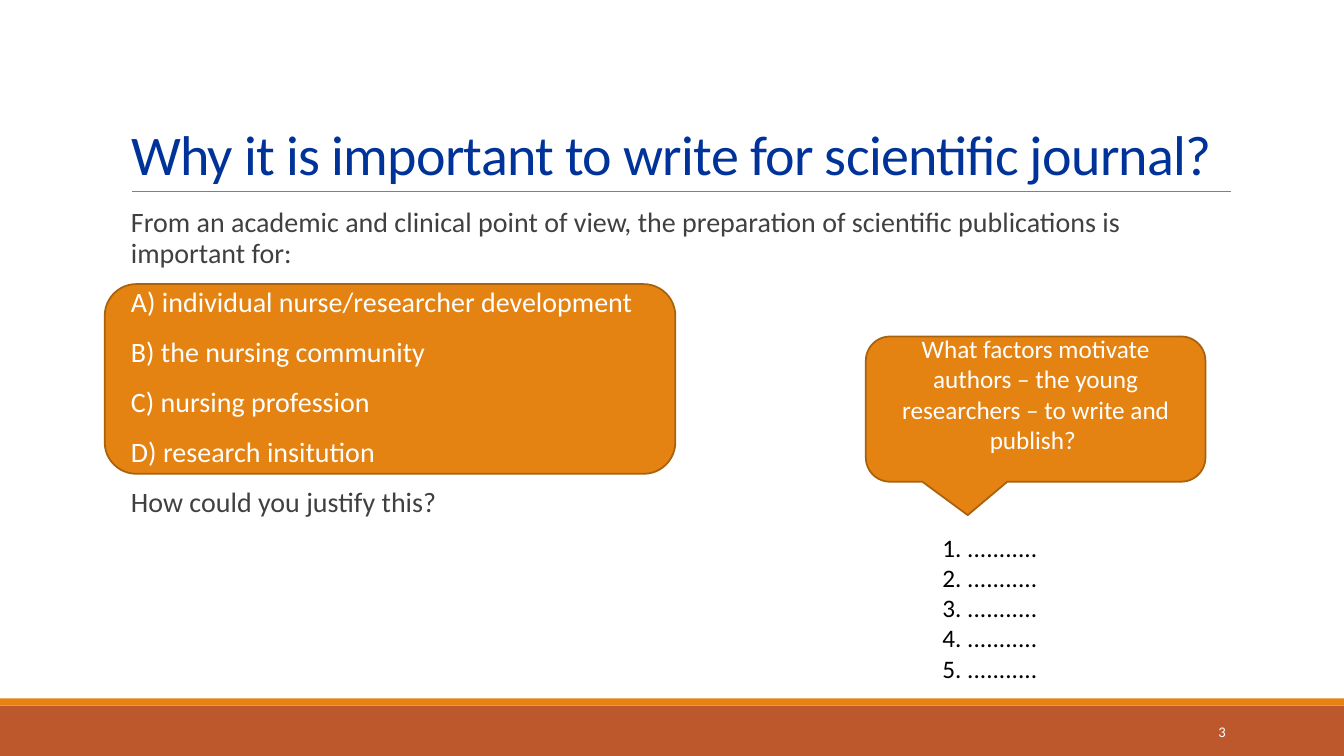
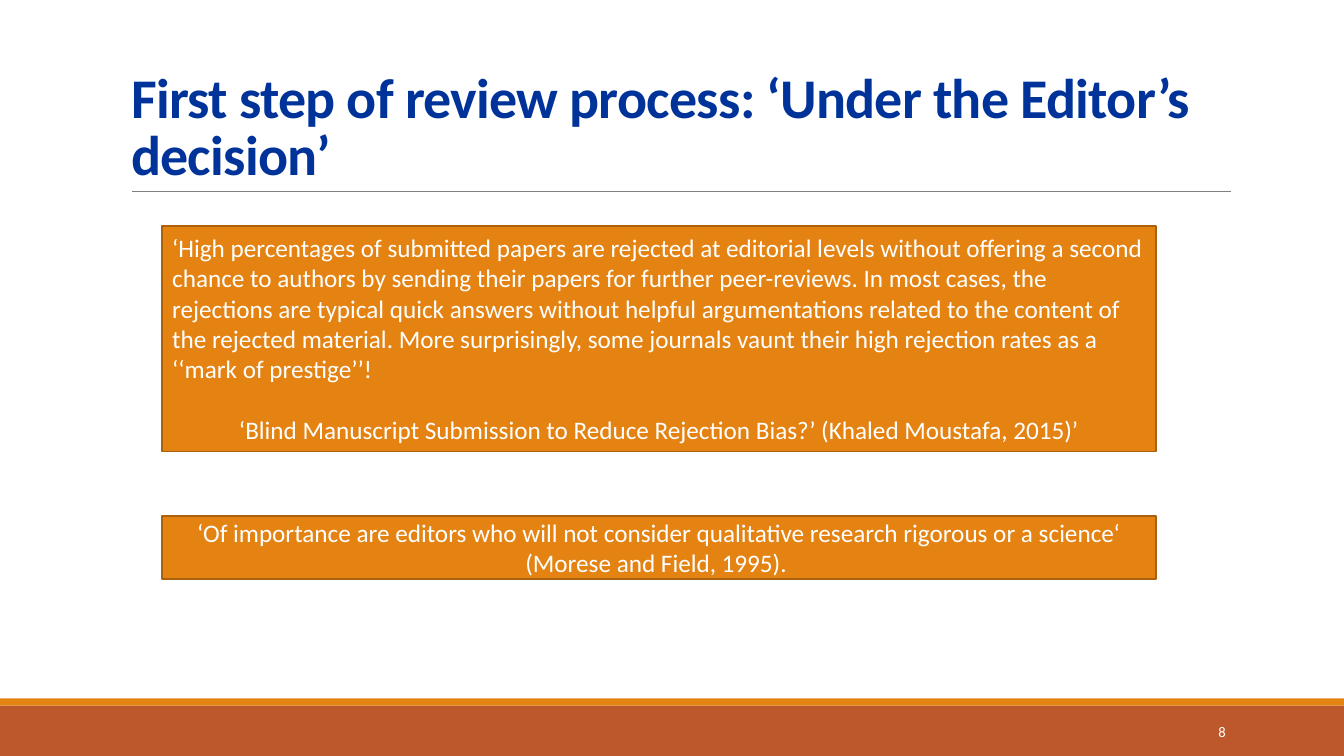
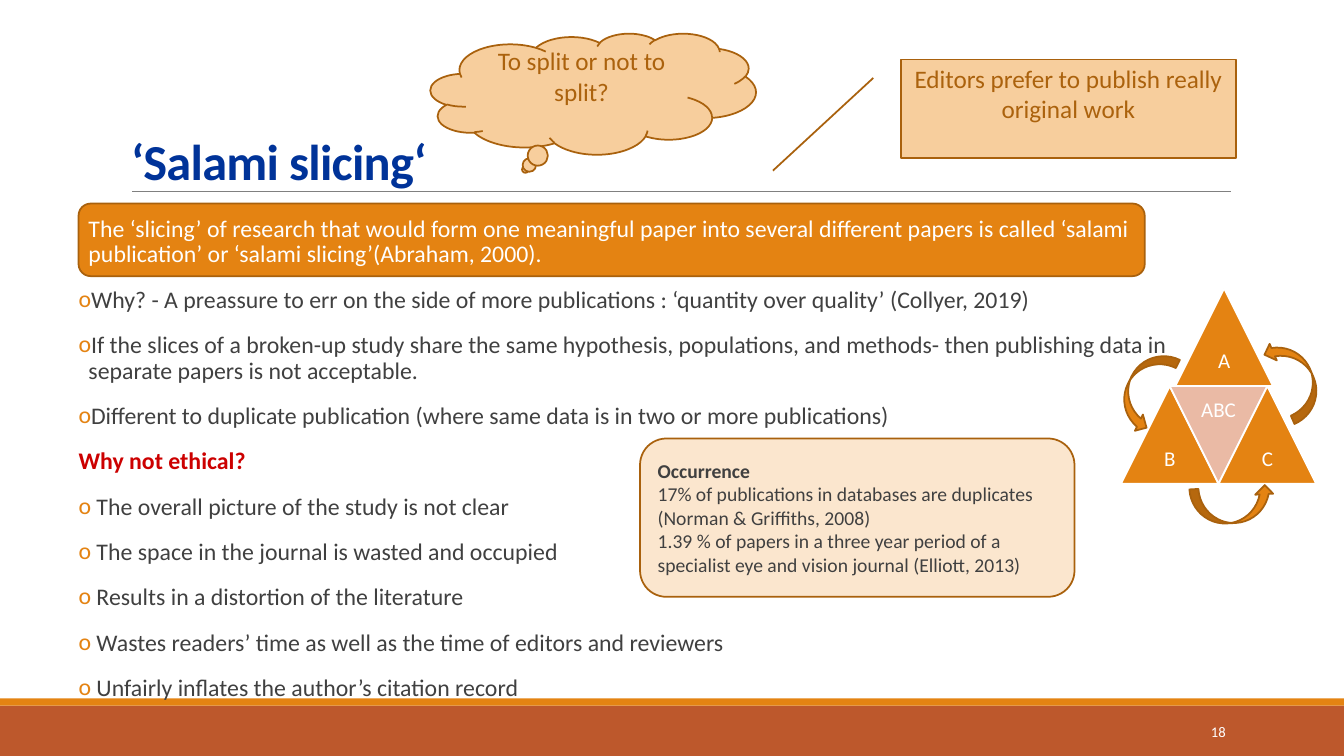
from dataclasses import dataclass
from typing import Optional, Sequence

from lxml.etree import SubElement
from pptx import Presentation
from pptx.dml.color import RGBColor
from pptx.enum.shapes import MSO_CONNECTOR, MSO_SHAPE
from pptx.enum.text import MSO_ANCHOR, MSO_AUTO_SIZE, PP_ALIGN
from pptx.oxml.ns import qn
from pptx.presentation import Presentation as Deck
from pptx.shapes.autoshape import Shape
from pptx.slide import Slide
from pptx.text.text import TextFrame, _Paragraph
from pptx.util import Cm, Pt

FONT = "Calibri"
ORANGE = RGBColor(0xE4, 0x83, 0x12)
RUST = RGBColor(0xBD, 0x58, 0x2C)
BROWN = RGBColor(0xA9, 0x61, 0x0D)
CALLOUT_TEXT = RGBColor(0xAB, 0x62, 0x0D)
PEACH = RGBColor(0xF7, 0xCE, 0x9D)
CREAM = RGBColor(0xFB, 0xE6, 0xCE)
PINK = RGBColor(0xEA, 0xBA, 0xA5)
NAVY = RGBColor(0x00, 0x33, 0x99)
RED = RGBColor(0xCC, 0x00, 0x00)
CHARCOAL = RGBColor(0x40, 0x40, 0x40)
GRAY = RGBColor(0x80, 0x80, 0x80)
WHITE = RGBColor(0xFF, 0xFF, 0xFF)
BLACK = RGBColor(0x00, 0x00, 0x00)

TITLE_AND_CONTENT, TITLE_ONLY = 1, 5
LOW_INSET = 0.89  # lifts centred text by half a line


@dataclass(frozen=True)
class Box:
    """A frame in centimetres."""
    left: float
    top: float
    width: float
    height: float

    def place(self, shape: Shape) -> None:
        shape.left, shape.top = Cm(self.left), Cm(self.top)
        shape.width, shape.height = Cm(self.width), Cm(self.height)

    def lengths(self) -> tuple[Cm, Cm, Cm, Cm]:
        return Cm(self.left), Cm(self.top), Cm(self.width), Cm(self.height)


@dataclass(frozen=True)
class Line:
    """One paragraph; bullet None means neither bullet nor indent."""
    text: str
    color: RGBColor = WHITE
    bold: bool = False
    align: PP_ALIGN = PP_ALIGN.LEFT
    bullet: Optional[str] = " "
    space_before: float = 0


@dataclass(frozen=True)
class Triangle:
    label: str
    left: float
    top: float
    kind: MSO_SHAPE = MSO_SHAPE.ISOSCELES_TRIANGLE
    fill: RGBColor = ORANGE


@dataclass(frozen=True)
class CycleArrow:
    left: float
    top: float
    rotation: float


def write_lines(frame: TextFrame, lines: Sequence[Line], size: float) -> list[_Paragraph]:
    paragraphs = []
    for index, line in enumerate(lines):
        paragraph = frame.add_paragraph() if index else frame.paragraphs[0]
        paragraph.alignment = line.align
        paragraph.space_before = Pt(line.space_before)
        run = paragraph.add_run()
        run.text = line.text
        run.font.name, run.font.size = FONT, Pt(size)
        run.font.bold = line.bold
        run.font.color.rgb = line.color
        paragraphs.append(paragraph)
    return paragraphs


def add_bullet(paragraph: _Paragraph, bullet: Optional[str]) -> None:
    props = paragraph._p.get_or_add_pPr()
    indent = Cm(0.25) if bullet else 0
    props.set("marL", str(indent))
    props.set("indent", str(-indent))
    if bullet is None:
        SubElement(props, qn("a:buNone"))
        return
    SubElement(SubElement(props, qn("a:buClr")), qn("a:srgbClr"), val=str(ORANGE))
    SubElement(props, qn("a:buFont"), typeface=FONT)
    SubElement(props, qn("a:buChar"), char=bullet)


def add_panel(slide: Slide, kind: MSO_SHAPE, box: Box, fill: RGBColor = ORANGE,
              outline: Optional[RGBColor] = BROWN, lines: Sequence[Line] = (),
              size: float = 18, bottom_inset: float = 0.13) -> Shape:
    panel = slide.shapes.add_shape(kind, *box.lengths())
    panel.shadow.inherit = False
    panel.fill.solid()
    panel.fill.fore_color.rgb = fill
    if outline is None:
        panel.line.fill.background()
    else:
        panel.line.color.rgb = outline
        panel.line.width = Pt(1.25)
    panel.text_frame.vertical_anchor = MSO_ANCHOR.MIDDLE
    panel.text_frame.margin_bottom = Cm(bottom_inset)
    write_lines(panel.text_frame, lines, size)
    return panel


def add_text(slide: Slide, box: Box, lines: Sequence[Line], size: float,
             wrap: bool, anchor: MSO_ANCHOR) -> None:
    frame = slide.shapes.add_textbox(*box.lengths()).text_frame
    frame.word_wrap = wrap
    frame.vertical_anchor = anchor
    write_lines(frame, lines, size)


def add_titled_slide(deck: Deck, layout: int, number: str, title: str,
                     size: float = 40, bold: bool = True, top: float = 0.79) -> Slide:
    slide = deck.slides.add_slide(deck.slide_layouts[layout])
    heading = slide.shapes.title
    Box(3.05, top, 27.94, 4.04).place(heading)
    frame = heading.text_frame
    frame.auto_size = MSO_AUTO_SIZE.NONE
    frame.vertical_anchor = MSO_ANCHOR.BOTTOM
    for paragraph in write_lines(frame, [Line(title, NAVY, bold)], size):
        paragraph.line_spacing = 0.85
        for run in paragraph.runs:
            run._r.get_or_add_rPr().set("spc", "-50")
    add_text(slide, Box(27.51, 17.93, 3.63, 1.02),
             [Line(number, align=PP_ALIGN.RIGHT)], 10.5, True, MSO_ANCHOR.MIDDLE)
    return slide


def fill_body(slide: Slide, box: Box, lines: Sequence[Line], size: float) -> None:
    body = slide.placeholders[1]
    box.place(body)
    frame = body.text_frame
    frame.auto_size = MSO_AUTO_SIZE.NONE
    frame.margin_left = frame.margin_right = 0
    for paragraph, line in zip(write_lines(frame, lines, size), lines):
        paragraph.line_spacing = 0.9
        paragraph.space_before, paragraph.space_after = Pt(12), Pt(2)
        add_bullet(paragraph, line.bullet)


def send_behind_title(slide: Slide, panel: Shape) -> None:
    slide.shapes.title.element.addprevious(panel.element)


def decorate_master(deck: Deck, slide: Slide) -> None:
    """Draw the bands and title rule on a slide, then move them to the master."""
    footer = add_panel(slide, MSO_SHAPE.RECTANGLE, Box(0, 17.78, 33.87, 1.27), RUST, None)
    stripe = add_panel(slide, MSO_SHAPE.RECTANGLE, Box(0, 17.6, 33.87, 0.18), ORANGE, None)
    rule = slide.shapes.add_connector(
        MSO_CONNECTOR.STRAIGHT, Cm(3.33), Cm(4.83), Cm(31.01), Cm(4.83))
    rule.line.color.rgb = GRAY
    rule.line.width = Pt(0.5)
    SubElement(rule.element.spPr, qn("a:effectLst"))
    first_placeholder = deck.slide_master.placeholders[0].element
    for part in (footer, stripe, rule):
        first_placeholder.addprevious(part.element)


def build_importance(deck: Deck) -> None:
    slide = add_titled_slide(deck, TITLE_AND_CONTENT, "3",
                             "Why it is important to write for scientific journal?", bold=False)
    decorate_master(deck, slide)
    reasons = add_panel(slide, MSO_SHAPE.ROUNDED_RECTANGLE, Box(2.64, 7.16, 14.38, 4.78))
    send_behind_title(slide, reasons)
    fill_body(slide, Box(3.05, 5.13, 27.94, 11.18), [
        Line("From an academic and clinical point of view, the preparation of "
             "scientific publications is important for:", CHARCOAL),
        Line("A) individual nurse/researcher development"),
        Line("B) the nursing community"),
        Line("C) nursing profession"),
        Line("D) research insitution"),
        Line("How could you justify this?", CHARCOAL),
    ], 20)
    question = add_panel(
        slide, MSO_SHAPE.ROUNDED_RECTANGULAR_CALLOUT, Box(21.82, 8.48, 8.56, 3.66),
        lines=[Line("What factors motivate authors – the young researchers – "
                    "to write and publish? ", align=PP_ALIGN.CENTER)],
        bottom_inset=LOW_INSET)
    question.adjustments[0] = -0.2
    question.adjustments[1] = 0.73
    add_text(slide, Box(23.5, 13.28, 2.92, 4.11),
             [Line(f"{number}. ...........", BLACK) for number in range(1, 6)],
             18, False, MSO_ANCHOR.TOP)


def build_editor_decision(deck: Deck) -> None:
    slide = add_titled_slide(deck, TITLE_ONLY, "8",
                             "First step of review process: ‘Under the Editor’s decision’")
    add_panel(slide, MSO_SHAPE.RECTANGLE, Box(4.09, 5.69, 25.04, 5.69), lines=[
        Line("‘High percentages of submitted papers are rejected at editorial levels "
             "without offering a second chance to authors by sending their papers for "
             "further peer-reviews. In most cases, the rejections are typical quick "
             "answers without helpful argumentations related to the content of the "
             "rejected material. More surprisingly, some journals vaunt their high "
             "rejection rates as a ‘‘mark of prestige’’!"),
        Line("‘Blind Manuscript Submission to Reduce Rejection Bias?’ "
             "(Khaled Moustafa, 2015)’", align=PP_ALIGN.CENTER, space_before=22),
    ])
    add_panel(slide, MSO_SHAPE.RECTANGLE, Box(4.09, 13, 25.04, 1.6), lines=[
        Line("‘Of importance are editors who will not consider qualitative research "
             "rigorous or a science‘ (Morese and Field, 1995). ", align=PP_ALIGN.CENTER),
    ])


def add_slicing_cycle(slide: Slide) -> None:
    side, left, top = 2.46, 28.25, 9.73
    triangles = [
        Triangle("A", 29.62, top - side),
        Triangle("B", left, top),
        Triangle("ABC", left + side / 2, top, MSO_SHAPE.FLOWCHART_MERGE, PINK),
        Triangle("C", left + side, top),
    ]
    for triangle in triangles:
        frame = add_panel(
            slide, triangle.kind, Box(triangle.left, triangle.top, side, side),
            triangle.fill, WHITE, [Line(triangle.label, align=PP_ALIGN.CENTER)],
            15, 0.15).text_frame
        frame.margin_left = frame.margin_right = frame.margin_top = Cm(0.15)
        frame.word_wrap = False
        frame.paragraphs[0].line_spacing = 0.9
    for arrow in (CycleArrow(28.4, 8.76, 26.2), CycleArrow(32.16, 8.46, 156.6),
                  CycleArrow(30.61, 11.66, 266.7)):
        add_panel(slide, MSO_SHAPE.CURVED_RIGHT_ARROW,
                  Box(arrow.left, arrow.top, 0.91, 2.13)).rotation = arrow.rotation


def build_salami_slicing(deck: Deck) -> None:
    slide = add_titled_slide(deck, TITLE_AND_CONTENT, "18", "‘Salami slicing‘",
                             size=36, top=0.89)
    definition = add_panel(slide, MSO_SHAPE.ROUNDED_RECTANGLE, Box(1.98, 5.13, 26.87, 1.83))
    send_behind_title(slide, definition)
    practice = [
        "Why? - A preassure to err on the side of more publications : "
        "‘quantity over quality’ (Collyer, 2019)",
        "If the slices of a broken-up study share the same hypothesis, populations, "
        "and methods- then publishing data in separate papers is not acceptable.",
        "Different to duplicate publication (where same data is in two or more publications)",
    ]
    harms = [
        " The overall picture of the study is not clear",
        " The space in the journal is wasted and occupied",
        " Results in a distortion of the literature",
        " Wastes readers’ time as well as the time of editors and reviewers",
        " Unfairly inflates the author’s citation record",
    ]
    fill_body(slide, Box(1.98, 5.33, 29.01, 12.6), [
        Line("The ‘slicing’ of research that would form one meaningful paper into several "
             "different papers is called ‘salami publication’ or ‘salami slicing’"
             "(Abraham, 2000)."),
        *(Line(text, CHARCOAL, bullet="o") for text in practice),
        Line("Why not ethical?", RED, True, bullet=None),
        *(Line(text, CHARCOAL, bullet="o") for text in harms),
    ], 17)
    for kind, box, text in (
        (MSO_SHAPE.CLOUD_CALLOUT, Box(10.85, 0.84, 8.2, 3.05), "To split or not to split?"),
        (MSO_SHAPE.LINE_CALLOUT_1, Box(22.71, 1.5, 8.43, 2.49),
         "Editors prefer to publish really original work"),
    ):
        add_panel(slide, kind, box, PEACH,
                  lines=[Line(text, CALLOUT_TEXT, align=PP_ALIGN.CENTER)],
                  bottom_inset=LOW_INSET)
    add_slicing_cycle(slide)
    add_panel(slide, MSO_SHAPE.ROUNDED_RECTANGLE, Box(16.13, 11.05, 10.95, 3.99), CREAM, lines=[
        Line("Occurrence", CHARCOAL, True),
        Line("17% of publications in databases are duplicates (Norman & Griffiths, 2008)",
             CHARCOAL),
        Line("1.39 % of papers in a three year period of a specialist eye and vision "
             "journal (Elliott, 2013)", CHARCOAL),
    ], size=14)


def main() -> None:
    deck = Presentation()
    deck.slide_width, deck.slide_height = Cm(33.87), Cm(19.05)
    build_importance(deck)
    build_editor_decision(deck)
    build_salami_slicing(deck)
    deck.save("out.pptx")


if __name__ == "__main__":
    main()
